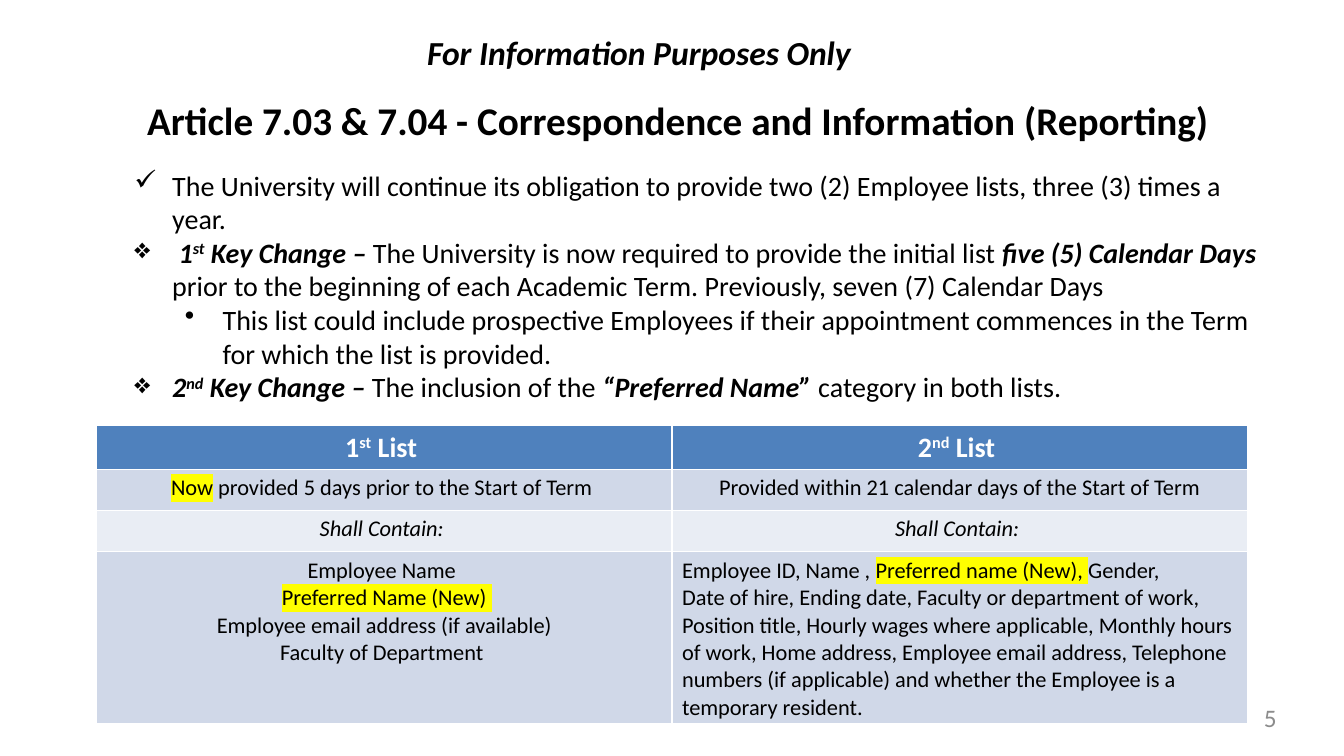
from lxml import etree
from pptx import Presentation
from pptx.dml.color import RGBColor
from pptx.enum.text import PP_ALIGN
from pptx.oxml.ns import qn
from pptx.util import Pt

LEFT, CENTER, RIGHT = PP_ALIGN.LEFT, PP_ALIGN.CENTER, PP_ALIGN.RIGHT
FONT = "Calibri"
COLORS = {
    "text": "000000",
    "number": "8C8C8C",
    "header_text": "FFFFFF",
    "header": "4F81BD",
    "band_dark": "D0D8E8",
    "band_light": "E9EDF4",
    "highlight": "FFFF00",
}


def add_runs(paragraph, runs, size, color="text"):
    for text, style in runs:
        run = paragraph.add_run()
        run.text = text
        run.font.size = Pt(size)
        run.font.bold = "b" in style
        run.font.italic = "i" in style
        run.font.color.rgb = RGBColor.from_string(COLORS[color])
        properties = run.font._element
        if "s" in style:
            properties.set("baseline", "30000")
        if "h" in style:
            highlight = etree.SubElement(properties, qn("a:highlight"))
            etree.SubElement(highlight, qn("a:srgbClr"), val=COLORS["highlight"])
        run.font.name = FONT


def add_text_frame(left, top, width, height, side_inset, top_inset):
    box = slide.shapes.add_textbox(Pt(left), Pt(top), Pt(width), Pt(height))
    frame = box.text_frame
    frame.word_wrap = True
    frame.margin_left = frame.margin_right = Pt(side_inset)
    frame.margin_top = frame.margin_bottom = Pt(top_inset)
    return frame


presentation = Presentation()
presentation.slide_width = Pt(960)
presentation.slide_height = Pt(540)
slide = presentation.slides.add_slide(presentation.slide_layouts[6])

bullets = [
    ("✓", 63, [("The University will continue its obligation to provide two (2) Employee lists, "
                "three (3) times a year.", "")]),
    ("❖", 63, [
        (" 1", "bi"), ("st", "bis"), (" Key Change – ", "bi"),
        ("The University is now required to provide the initial list ", ""),
        ("five (5) Calendar Days ", "bi"),
        ("prior to the beginning of each Academic Term. Previously, seven (7) Calendar Days", ""),
    ]),
    ("•", 99, [("This list could include prospective Employees if their appointment commences "
                "in the Term for which the list is provided.", "")]),
    ("❖", 63, [
        ("2", "bi"), ("nd", "bis"), (" Key Change – ", "bi"), ("The inclusion of the ", ""),
        ("“Preferred Name” ", "bi"), ("category in both lists.", ""),
    ]),
]
body = add_text_frame(60, 120, 840, 170, 0, 0)
for index, (symbol, indent, runs) in enumerate(bullets):
    paragraph = body.add_paragraph() if index else body.paragraphs[0]
    properties = paragraph._p.get_or_add_pPr()
    properties.set("marL", str(Pt(indent)))
    properties.set("indent", str(Pt(-27)))
    etree.SubElement(properties, qn("a:buChar"), char=symbol)
    add_runs(paragraph, runs, 20)

labels = [
    ((691, 502, 221, 27, 0, 0), "5", "", 18, "number", RIGHT),
    ((98, 65.5, 803.5, 41, 7.2, 3.6),
     "Article 7.03 & 7.04 - Correspondence and Information (Reporting)", "b", 28, "text", LEFT),
    ((298, 19, 364, 36, 7.2, 3.6), "For Information Purposes Only", "bi", 24, "text", LEFT),
]
for geometry, text, style, size, color, alignment in labels:
    paragraph = add_text_frame(*geometry).paragraphs[0]
    paragraph.alignment = alignment
    add_runs(paragraph, [(text, style)], size, color)

shall_contain = [[("Shall Contain: ", "i")]]
list_rows = [
    (29.5, "header", [
        [[("1", "b"), ("st", "bs"), (" List ", "b")]],
        [[("2", "b"), ("nd", "bs"), (" List ", "b")]],
    ]),
    (29.5, "band_dark", [
        [[("Now", "h"), (" provided 5 days prior to the Start of Term ", "")]],
        [[("Provided within 21 calendar days of the Start of Term", "")]],
    ]),
    (29.5, "band_light", [shall_contain, shall_contain]),
    (122, "band_dark", [
        [
            [("Employee Name ", "")],
            [(" ", ""), ("Preferred Name (New) ", "h")],
            [("Employee email address (if available)", "")],
            [("Faculty of Department ", "")],
        ],
        [
            [("Employee ID, Name , ", ""), ("Preferred name (New), ", "h"), ("Gender,", "")],
            [("Date of hire, Ending date, Faculty or department of work, Position title, "
              "Hourly wages where applicable, Monthly hours of work, Home address, "
              "Employee email address, Telephone numbers (if applicable) and whether "
              "the Employee is a temporary resident.", "")],
        ],
    ]),
]
table = slide.shapes.add_table(4, 2, Pt(69), Pt(304), Pt(822), Pt(210.5)).table
for row_index, (height, fill, cells) in enumerate(list_rows):
    table.rows[row_index].height = Pt(height)
    is_header = fill == "header"
    for column_index, paragraphs in enumerate(cells):
        cell = table.cell(row_index, column_index)
        cell.fill.solid()
        cell.fill.fore_color.rgb = RGBColor.from_string(COLORS[fill])
        frame = cell.text_frame
        for index, runs in enumerate(paragraphs):
            paragraph = frame.add_paragraph() if index else frame.paragraphs[0]
            paragraph.alignment = LEFT if (row_index, column_index) == (3, 1) else CENTER
            add_runs(paragraph, runs, 20 if is_header else 16,
                     "header_text" if is_header else "text")

presentation.save("out.pptx")
